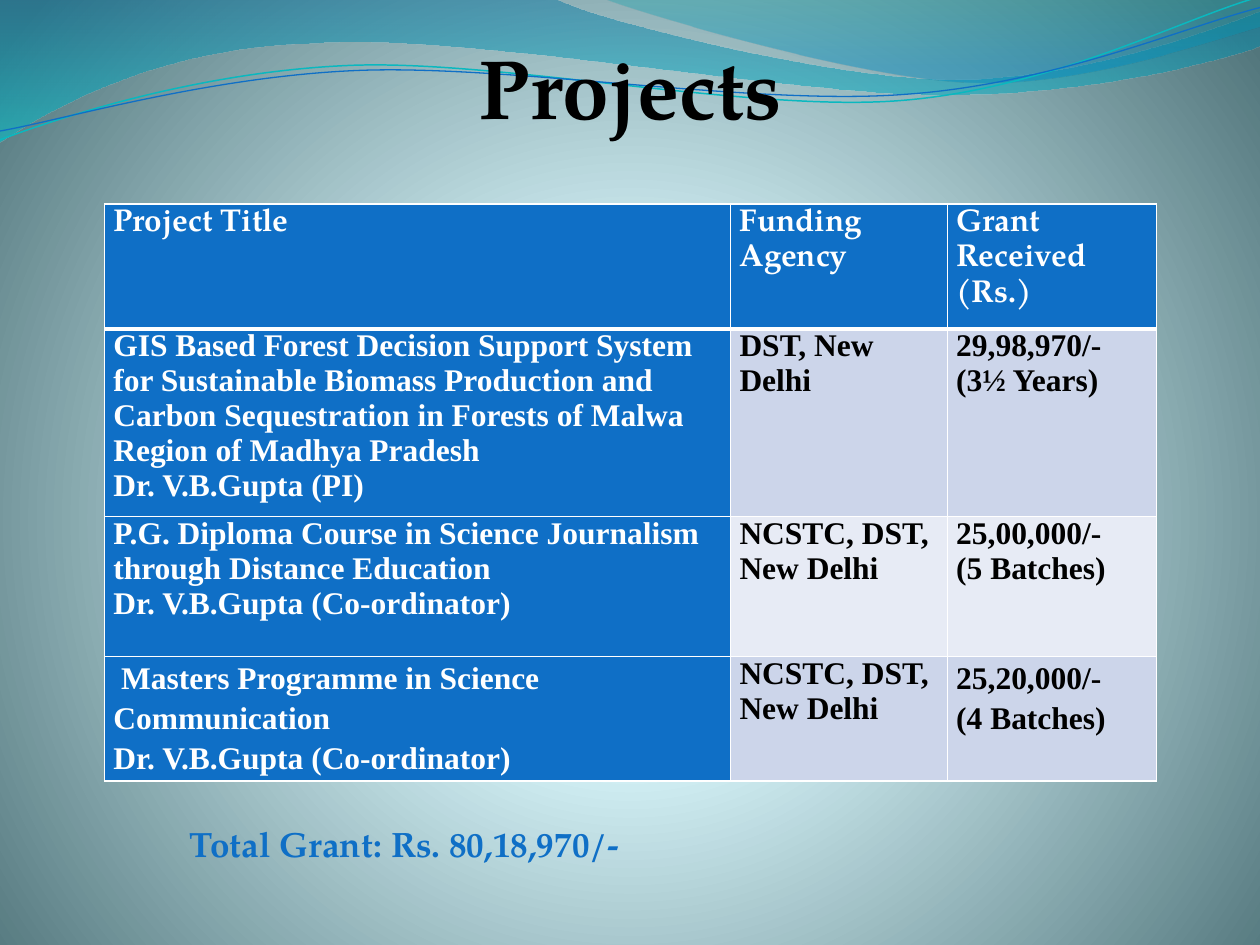
from lxml import etree
from pptx import Presentation
from pptx.dml.color import RGBColor
from pptx.enum.text import MSO_ANCHOR, PP_ALIGN
from pptx.oxml import parse_xml
from pptx.oxml.ns import nsdecls, qn
from pptx.util import Inches, Pt

COLORS = {
    "black": "000000", "white": "FFFFFF", "blue": "0F6FC6", "teal": "0AB8BF",
    "band_dark": "CCD5EA", "band_light": "E7EBF5",
    "glow": "DEFBFF", "glow_mid": "DDFAFF", "edge": "52767C",
    "wave_top": "0074A1", "wave_bottom": "00C6CF",
    "crest_top": "00A1A9", "crest_bottom": "008BBF",
}
HEADING_FONT, BODY_FONT = "TeX Gyre Pagella", "Times New Roman"

# Wave outlines: a pair is a straight step, six numbers are a cubic curve
WAVE = [(0, 0), (4.4, -0.01), (4.76, 0.17, 6.64, 0.63, 7.58, 0.63),
        (8.53, 0.63, 9.58, 0.26, 10, 0.09), (10.01, 0.36),
        (9.83, 0.44, 8.7, 0.76, 7.46, 0.75), (6.22, 0.75, 3.82, 0.28, 2.57, 0.34),
        (1.29, 0.36, 0.46, 0.83, -0.01, 1.13)]
CREST = [(4.79, -0.01), (5.09, 0.11, 6.82, 0.62, 7.69, 0.65),
         (8.56, 0.69, 9.61, 0.32, 10, 0.21), (10, 0)]
TEAL_LINE = [(0, 1.11), (0.48, 0.93, 1.58, 0.57, 2.77, 0.52),
             (3.95, 0.47, 5.93, 0.89, 7.13, 0.8), (8.33, 0.71, 9.38, 0.15, 9.98, -0.02)]
BLUE_LINE = [(0, 1.04), (0.47, 0.96, 1.64, 0.61, 2.83, 0.56),
             (4.03, 0.51, 5.97, 0.84, 7.17, 0.75), (8.36, 0.67, 9.41, 0.21, 10, 0.06)]

HEADINGS = ["Project Title", "Funding Agency", "Grant Received (Rs.)"]
PROJECTS = [
    ["GIS Based Forest Decision Support System for Sustainable Biomass Production and "
     "Carbon Sequestration in Forests of Malwa Region of Madhya Pradesh\nDr. V.B.Gupta (PI)",
     "DST, New Delhi", "29,98,970/-\n(3½ Years)"],
    ["P.G. Diploma Course in Science Journalism through Distance Education\n"
     "Dr. V.B.Gupta (Co-ordinator)", "NCSTC, DST, New Delhi", "25,00,000/-\n(5 Batches)"],
    [" Masters Programme in Science Communication\nDr. V.B.Gupta (Co-ordinator)",
     "NCSTC, DST, New Delhi", "25,20,000/-\n(4 Batches)"],
]


def rgb(name):
    return RGBColor.from_string(COLORS[name])


def write(frame, text, font=BODY_FONT, size=18, color="black", align=None, spacing=None):
    frame.word_wrap = True
    for i, line in enumerate(text.split("\n")):
        paragraph = frame.add_paragraph() if i else frame.paragraphs[0]
        paragraph.alignment = align
        if spacing:
            paragraph.line_spacing = spacing
        run = paragraph.add_run()
        run.text = line
        run.font.name, run.font.size, run.font.bold = font, Pt(size), True
        run.font.color.rgb = rgb(color)


def gradient(stops, direction):
    """Gradient fill from (position %, colour, opacity %) stops."""
    marks = "".join(
        f'<a:gs pos="{pos * 1000}"><a:srgbClr val="{COLORS[color]}">'
        f'<a:alpha val="{opacity * 1000}"/></a:srgbClr></a:gs>'
        for pos, color, opacity in stops)
    return parse_xml(f'<a:gradFill {nsdecls("a")} rotWithShape="1">'
                     f'<a:gsLst>{marks}</a:gsLst>{direction}</a:gradFill>')


def paint_background(slide):
    slide.background.fill.solid()
    solid = slide.element.cSld.find(".//" + qn("a:solidFill"))
    direction = ('<a:path path="circle">'
                 '<a:fillToRect l="10000" t="110000" r="10000" b="100000"/></a:path>')
    stops = [(0, "glow", 100), (25, "glow_mid", 100), (100, "edge", 100)]
    solid.getparent().replace(solid, gradient(stops, direction))


def add_outline(slide, outline, close):
    """Freeform through the end points, with its curved steps bent afterwards."""
    knots = [(Inches(step[-2]), Inches(step[-1])) for step in outline]
    builder = slide.shapes.build_freeform(*knots[0])
    builder.add_line_segments(knots[1:], close=close)
    shape = builder.convert_to_shape()
    shape.shadow.inherit = False
    straight_steps = list(shape.element.iter(qn("a:lnTo")))
    for straight, step in zip(straight_steps, outline[1:]):
        if len(step) == 6:
            curve = etree.Element(qn("a:cubicBezTo"))
            for x, y in zip(step[::2], step[1::2]):
                etree.SubElement(curve, qn("a:pt"), x=str(Inches(x) - shape.left),
                                 y=str(Inches(y) - shape.top))
            straight.getparent().replace(straight, curve)
    return shape


def add_waves(slide):
    bands = [(WAVE, [(0, "wave_top", 45), (100, "wave_bottom", 55)]),
             (CREST, [(0, "crest_top", 30), (80, "crest_bottom", 45)])]
    for outline, stops in bands:
        band = add_outline(slide, outline, close=True)
        band.line.fill.background()
        band.fill.solid()
        solid = band.element.spPr.find(qn("a:solidFill"))
        solid.getparent().replace(solid, gradient(stops, '<a:lin ang="5400000" scaled="1"/>'))
    for outline, color, width in [(TEAL_LINE, "teal", 0.85), (BLUE_LINE, "blue", 0.75)]:
        ripple = add_outline(slide, outline, close=False)
        ripple.fill.background()
        ripple.line.color.rgb = rgb(color)
        ripple.line.width = Pt(width)


def add_title(slide, left, top, width, height):
    title = slide.shapes.title
    title.left, title.top, title.width, title.height = left, top, width, height
    title.text_frame.vertical_anchor = MSO_ANCHOR.TOP
    write(title.text_frame, "Projects", font=HEADING_FONT, size=48, align=PP_ALIGN.CENTER)
    # Bring the title in front of the waves
    slide.shapes.element.append(title.element)


def add_borders(cell, bottom):
    properties = cell._tc.get_or_add_tcPr()
    for i, (side, width) in enumerate([("lnL", 1), ("lnR", 1), ("lnT", 1), ("lnB", bottom)]):
        line = etree.Element(qn(f"a:{side}"), w=str(Pt(width)))
        fill = etree.SubElement(line, qn("a:solidFill"))
        etree.SubElement(fill, qn("a:srgbClr"), val=COLORS["white"])
        properties.insert(i, line)


def add_projects_table(slide, left, top, width, height):
    rows = [HEADINGS] + PROJECTS
    table = slide.shapes.add_table(len(rows), len(HEADINGS), left, top, width, height).table
    for column, size in zip(table.columns, [4.97, 1.72, 1.66]):
        column.width = Inches(size)
    for row, size in zip(table.rows, [0.99, 1.49, 1.11, 0.99]):
        row.height = Inches(size)
    for r, texts in enumerate(rows):
        for c, text in enumerate(texts):
            cell = table.cell(r, c)
            header, blue = r == 0, r == 0 or c == 0
            loose = header or (r == len(rows) - 1 and c != 1)
            cell.margin_left = cell.margin_right = Inches(0.07)
            cell.margin_top = cell.margin_bottom = 0
            cell.fill.solid()
            cell.fill.fore_color.rgb = rgb(
                "blue" if blue else "band_dark" if r % 2 else "band_light")
            add_borders(cell, bottom=3 if header else 1)
            write(cell.text_frame, text, font=HEADING_FONT if header else BODY_FONT,
                  color="white" if blue else "black",
                  align=PP_ALIGN.JUSTIFY if header else None,
                  spacing=1.15 if loose else None)


def add_total(slide, left, top, width, height):
    total = slide.shapes.add_textbox(left, top, width, height)
    write(total.text_frame, "Total Grant: Rs. 80,18,970/-",
          font=HEADING_FONT, size=20, color="blue")


def main():
    prs = Presentation()
    prs.slide_width, prs.slide_height = Inches(10), Inches(7.5)
    slide = prs.slides.add_slide(prs.slide_layouts[5])
    paint_background(slide)
    add_waves(slide)
    add_projects_table(slide, Inches(0.83), Inches(1.62), Inches(8.35), Inches(4.68))
    add_title(slide, Inches(1.02), Inches(0.23), Inches(7.97), Inches(0.91))
    add_total(slide, Inches(1.41), Inches(6.48), Inches(7.73), Inches(0.44))
    prs.save("out.pptx")


if __name__ == "__main__":
    main()
